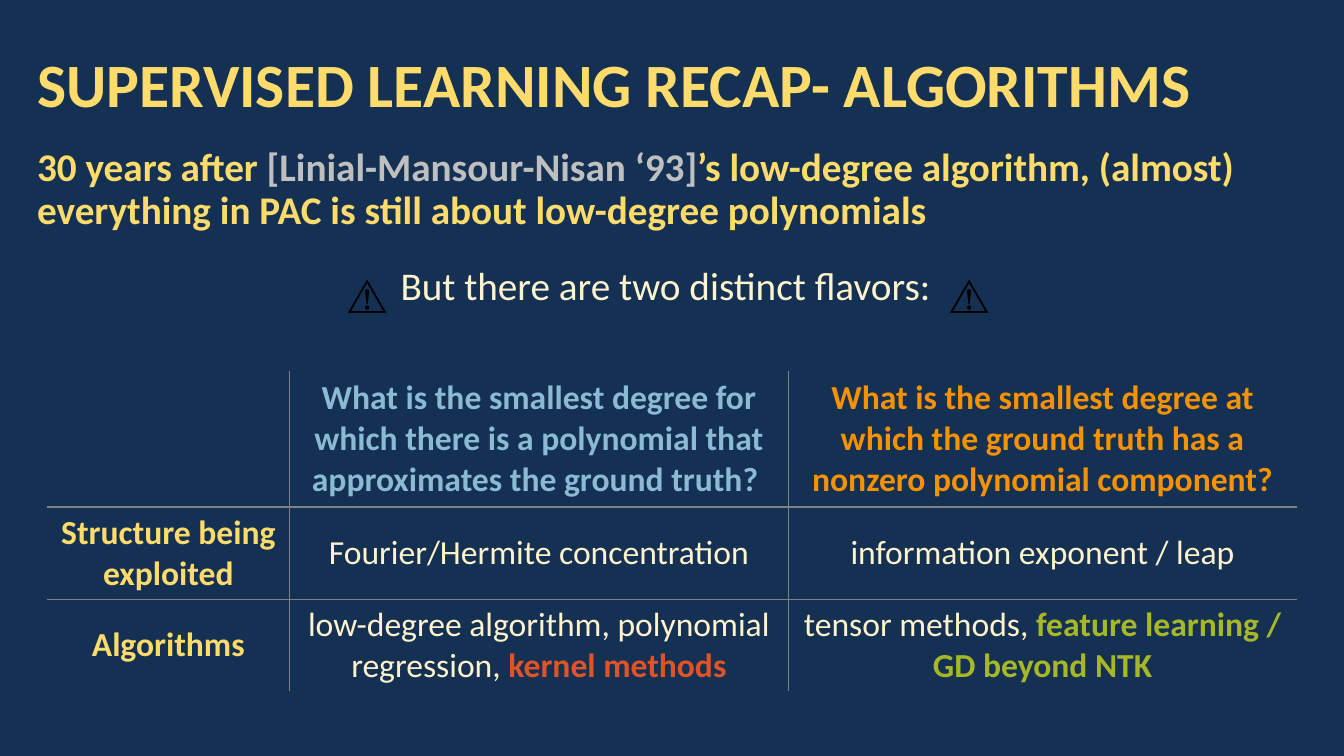
from dataclasses import dataclass

from lxml.etree import SubElement
from pptx import Presentation
from pptx.dml.color import RGBColor
from pptx.enum.text import MSO_ANCHOR, PP_ALIGN
from pptx.oxml import parse_xml
from pptx.oxml.ns import nsdecls, qn
from pptx.slide import Slide
from pptx.table import _Cell
from pptx.text.text import TextFrame, _Paragraph
from pptx.util import Inches, Pt

COLORS = {
    "navy": "143053", "yellow": "FEDB6A", "cream": "FFF3CD", "gray": "BFBFBF",
    "blue": "8ABAD4", "orange": "F69200", "red": "DF5327", "green": "A6B727",
    "rule": "808080", "black": "000000",
}
FONT = "Calibri"


@dataclass(frozen=True)
class Span:
    text: str
    color: str
    bold: bool = True


COLUMN_WIDTHS = [2.4, 4.95, 5.04]
ROW_HEIGHTS = [1.35, 0.92, 0.91]
FLAVORS: list[list[list[Span]]] = [
    [
        [],
        [Span("What is the smallest degree for which there is a polynomial "
              "that approximates the ground truth? ", "blue")],
        [Span("What is the smallest degree at which the ground truth has a "
              "nonzero polynomial component?", "orange")],
    ],
    [
        [Span("Structure being exploited", "yellow")],
        [Span("Fourier/Hermite concentration", "cream", False)],
        [Span("information exponent / leap", "cream", False)],
    ],
    [
        [Span("Algorithms", "yellow")],
        [Span("low-degree algorithm, polynomial regression, ", "cream", False),
         Span("kernel methods", "red")],
        [Span("tensor methods, ", "cream", False),
         Span("feature learning / GD beyond NTK", "green")],
    ],
]
WARNING_LEFTS = [3.35, 9.32]


def rgb(name: str) -> RGBColor:
    return RGBColor.from_string(COLORS[name])


def write_spans(para: _Paragraph, spans: list[Span], size: float) -> None:
    for span in spans:
        run = para.add_run()
        run.text = span.text
        run.font.name = FONT
        run.font.size = Pt(size)
        run.font.bold = span.bold
        run.font.color.rgb = rgb(span.color)


def add_text_frame(slide: Slide, left: float, top: float, width: float,
                   height: float, wrap: bool = True) -> TextFrame:
    box = slide.shapes.add_textbox(
        Inches(left), Inches(top), Inches(width), Inches(height))
    box.text_frame.word_wrap = wrap
    return box.text_frame


def set_borders(cell: _Cell, visible: dict[str, bool]) -> None:
    """Draw a thin rule on each visible side and clear the other sides."""
    properties = cell._tc.get_or_add_tcPr()
    for position, (side, shown) in enumerate(visible.items()):
        line = parse_xml(f'<a:ln{side} {nsdecls("a")} w="{Pt(1)}"/>')
        if shown:
            fill = SubElement(line, qn("a:solidFill"))
            SubElement(fill, qn("a:srgbClr"), val=COLORS["rule"])
        else:
            SubElement(line, qn("a:noFill"))
        properties.insert(position, line)


def add_title(slide: Slide) -> None:
    frame = add_text_frame(slide, 0.27, 0.31, 12.8, 1.11)
    frame.vertical_anchor = MSO_ANCHOR.MIDDLE
    para = frame.paragraphs[0]
    para.line_spacing = 0.9
    write_spans(para, [Span("SUPERVISED LEARNING RECAP- ALGORITHMS", "yellow")], 44)


def add_introduction(slide: Slide) -> None:
    frame = add_text_frame(slide, 0.27, 1.42, 12.24, 1.75)
    claim = frame.paragraphs[0]
    write_spans(claim, [
        Span("30 years after ", "yellow"),
        Span("[Linial-Mansour-Nisan ‘93]", "gray"),
        Span("’s low-degree algorithm, (almost) everything in PAC is still "
             "about low-degree polynomials", "yellow"),
    ], 28)
    turn = frame.add_paragraph()
    turn.alignment = PP_ALIGN.CENTER
    turn.space_before = Pt(24)
    turn._p.get_or_add_pPr().set("marL", str(Inches(0.42)))
    write_spans(turn, [Span("But there are two distinct flavors:", "cream", False)], 28)
    for para in frame.paragraphs:
        para.line_spacing = 0.9


def add_flavor_table(slide: Slide) -> None:
    last_row, last_column = len(ROW_HEIGHTS) - 1, len(COLUMN_WIDTHS) - 1
    table = slide.shapes.add_table(
        len(ROW_HEIGHTS), len(COLUMN_WIDTHS), Inches(0.47), Inches(3.68),
        Inches(sum(COLUMN_WIDTHS)), Inches(sum(ROW_HEIGHTS))).table
    table.first_row = table.horz_banding = False
    for column, width in zip(table.columns, COLUMN_WIDTHS):
        column.width = Inches(width)
    for r, (row, height) in enumerate(zip(table.rows, ROW_HEIGHTS)):
        row.height = Inches(height)
        for c, cell in enumerate(row.cells):
            cell.fill.background()
            cell.vertical_anchor = MSO_ANCHOR.MIDDLE
            set_borders(cell, {"L": c > 0, "R": c < last_column,
                               "T": r > 0, "B": r < last_row})
            para = cell.text_frame.paragraphs[0]
            para.alignment = PP_ALIGN.CENTER
            write_spans(para, FLAVORS[r][c], 24)


def main() -> None:
    deck = Presentation()
    deck.slide_width, deck.slide_height = Inches(13.33), Inches(7.5)
    slide = deck.slides.add_slide(deck.slide_layouts[6])
    slide.background.fill.solid()
    slide.background.fill.fore_color.rgb = rgb("navy")
    add_title(slide)
    add_introduction(slide)
    add_flavor_table(slide)
    for left in WARNING_LEFTS:
        frame = add_text_frame(slide, left, 2.63, 0.66, 0.57, wrap=False)
        write_spans(frame.paragraphs[0], [Span("⚠️", "black", False)], 28)
    deck.save("out.pptx")


if __name__ == "__main__":
    main()
